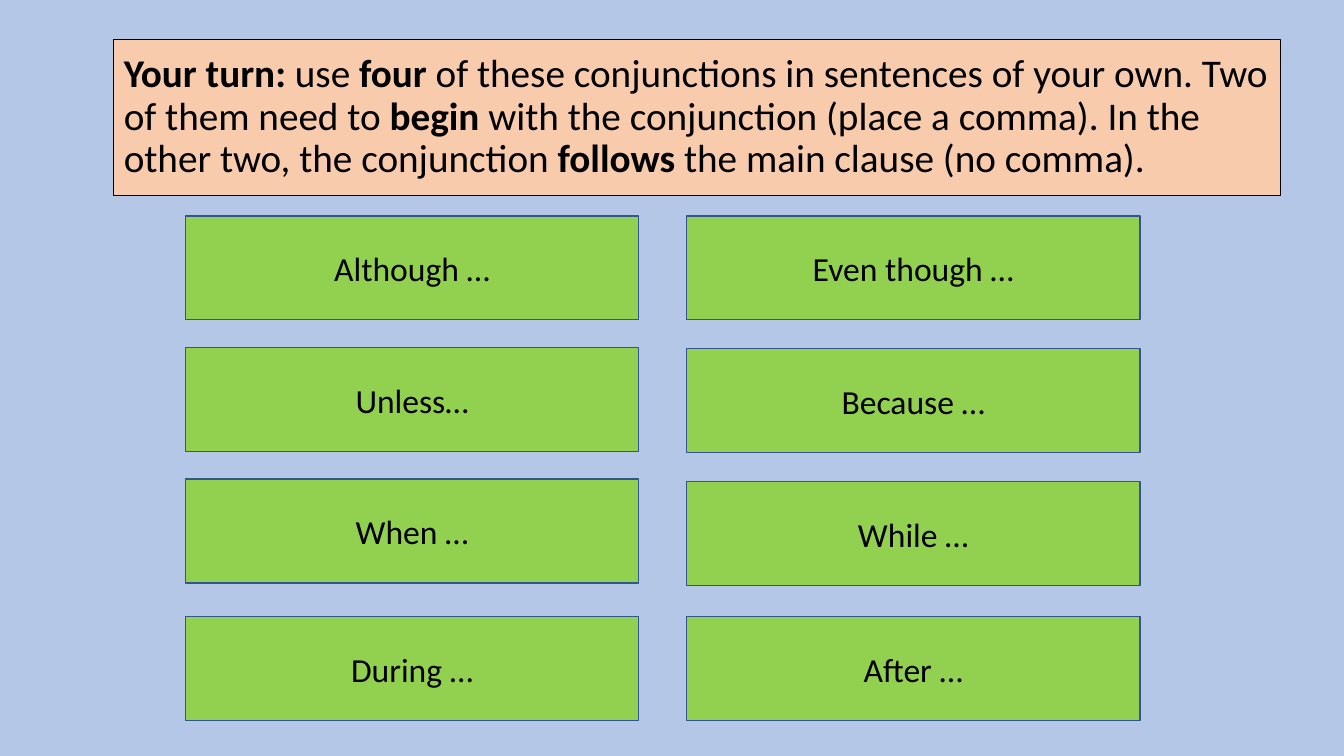
from dataclasses import dataclass

from pptx import Presentation
from pptx.dml.color import RGBColor
from pptx.enum.shapes import MSO_SHAPE
from pptx.enum.text import MSO_ANCHOR, PP_ALIGN
from pptx.slide import Slide
from pptx.util import Cm, Pt

SKY = RGBColor(0xB4, 0xC7, 0xE7)
PEACH = RGBColor(0xF8, 0xCB, 0xAD)
GREEN = RGBColor(0x92, 0xD0, 0x50)
NAVY = RGBColor(0x32, 0x54, 0x91)
BLACK = RGBColor(0x00, 0x00, 0x00)

FONT = "Calibri"
CARD_WIDTH = 11.43
CARD_HEIGHT = 2.62


@dataclass(frozen=True)
class Span:
    text: str
    bold: bool = False


@dataclass(frozen=True)
class Box:
    left: float
    top: float
    width: float
    height: float
    fill: RGBColor
    line: RGBColor
    line_width: float
    size: int
    align: PP_ALIGN
    spacing: float
    spans: tuple[Span, ...]


@dataclass(frozen=True)
class Column:
    left: float
    tops: tuple[float, ...]
    words: tuple[str, ...]


TASK = Box(
    2.87, 0.99, 29.41, 3.94, PEACH, BLACK, 0.75, 28, PP_ALIGN.LEFT, 0.9,
    (
        Span("Your turn:", True),
        Span(" use "),
        Span("four ", True),
        Span("of these conjunctions in sentences of your own. Two of them need to "),
        Span("begin ", True),
        Span("with the conjunction (place a comma). In the other two, the conjunction "),
        Span("follows ", True),
        Span("the main clause (no comma)."),
    ),
)

COLUMNS = (
    Column(4.67, (5.44, 8.76, 12.07, 15.54),
           ("Although …", "Unless…", "When …", "During …")),
    Column(17.3, (5.44, 8.79, 12.14, 15.54),
           ("Even though …", "Because …", "While …", "After …")),
)


def conjunction_card(left: float, top: float, word: str) -> Box:
    return Box(left, top, CARD_WIDTH, CARD_HEIGHT, GREEN, NAVY, 1, 24,
               PP_ALIGN.CENTER, 1.0, (Span(word),))


def draw_box(s: Slide, box: Box) -> None:
    sp = s.shapes.add_shape(MSO_SHAPE.RECTANGLE, Cm(box.left), Cm(box.top),
                            Cm(box.width), Cm(box.height))
    sp.shadow.inherit = False
    sp.fill.solid()
    sp.fill.fore_color.rgb = box.fill
    sp.line.color.rgb = box.line
    sp.line.width = Pt(box.line_width)
    tf = sp.text_frame
    tf.word_wrap = True
    tf.vertical_anchor = MSO_ANCHOR.MIDDLE
    p = tf.paragraphs[0]
    p.alignment = box.align
    p.line_spacing = box.spacing
    for span in box.spans:
        r = p.add_run()
        r.text = span.text
        r.font.name = FONT
        r.font.size = Pt(box.size)
        r.font.bold = span.bold
        r.font.color.rgb = BLACK


def main() -> None:
    prs = Presentation()
    prs.slide_width = Cm(33.87)
    prs.slide_height = Cm(19.05)
    s = prs.slides.add_slide(prs.slide_layouts[6])
    s.background.fill.solid()
    s.background.fill.fore_color.rgb = SKY
    draw_box(s, TASK)
    for column in COLUMNS:
        for top, word in zip(column.tops, column.words):
            draw_box(s, conjunction_card(column.left, top, word))
    prs.save("out.pptx")


if __name__ == "__main__":
    main()
